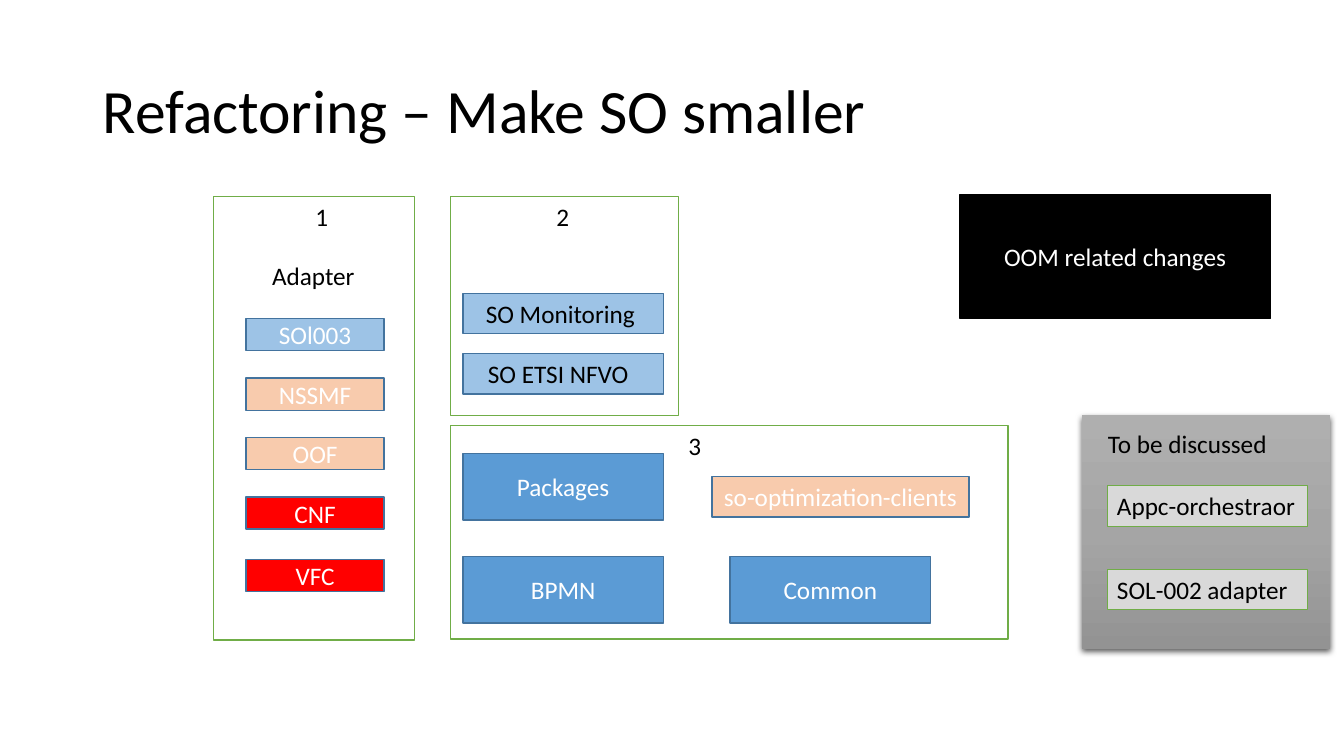
from pptx import Presentation
from pptx.dml.color import RGBColor
from pptx.enum.shapes import MSO_SHAPE as SHAPE
from pptx.enum.text import MSO_ANCHOR as ANCHOR, MSO_AUTO_SIZE as FIT, PP_ALIGN as ALIGN
from pptx.oxml import parse_xml
from pptx.oxml.ns import nsdecls, qn
from pptx.util import Inches, Pt

BLACK = RGBColor(0, 0, 0)
WHITE = RGBColor(255, 255, 255)
GREEN = RGBColor(0x70, 0xAD, 0x47)
NAVY = RGBColor(0x43, 0x73, 0x9E)
BLUE = RGBColor(0x5B, 0x9B, 0xD5)
SKY = RGBColor(0x9D, 0xC3, 0xE6)
PEACH = RGBColor(0xF8, 0xCB, 0xAD)
RED = RGBColor(255, 0, 0)
PALE = RGBColor(0xD9, 0xD9, 0xD9)
GREYS = [(0, "AFAFAF"), (50, "A5A5A5"), (100, "939393")]

COL_X, COL_W = 4.59, 1.99
ADAPTERS = [("SOl003", SKY, 3.16), ("NSSMF", PEACH, 3.75), ("OOF", PEACH, 4.34),
            ("CNF", RED, 4.93), ("VFC", RED, 5.55)]
MODULES = [("Packages", COL_X, 4.5), ("BPMN", COL_X, 5.52), ("Common", 7.24, 5.52)]
SERVICES = [("SO Monitoring", 4.72, 2.91, 1.69), ("SO ETSI NFVO", 4.74, 3.51, 1.61)]
GROUPS = [("1", 3.03, 1.95), ("2", 5.42, 1.95), ("3", 6.73, 4.22)]
TAGS = [("Appc-orchestraor", 4.82), ("SOL-002 adapter", 5.65)]


def style(frame, text, color, size=18):
    frame.text = text
    font = frame.paragraphs[0].runs[0].font
    font.name, font.size, font.color.rgb = "Calibri", Pt(size), color


def add_title(slide, text):
    title = slide.shapes.title
    title.left, title.top = Inches(0.92), Inches(0.4)
    title.width, title.height = Inches(11.5), Inches(1.45)
    frame = title.text_frame
    style(frame, text, BLACK, 44)
    frame.vertical_anchor = ANCHOR.MIDDLE
    frame.paragraphs[0].alignment = ALIGN.LEFT
    frame.paragraphs[0].line_spacing = 0.9


def add_box(slide, at, fill, line, text="", weight=1):
    box = slide.shapes.add_shape(SHAPE.RECTANGLE, *map(Inches, at))
    box.shadow.inherit = False
    box.fill.solid()
    box.fill.fore_color.rgb = fill
    box.line.color.rgb = line
    box.line.width = Pt(weight)
    if text:
        frame = box.text_frame
        style(frame, text, WHITE)
        frame.vertical_anchor = ANCHOR.MIDDLE
        frame.paragraphs[0].alignment = ALIGN.CENTER
    return box


def add_label(slide, text, x, y, width):
    label = slide.shapes.add_textbox(*map(Inches, (x, y, width, 0.4)))
    style(label.text_frame, text, BLACK)
    label.text_frame.word_wrap = False
    label.text_frame.auto_size = FIT.SHAPE_TO_FIT_TEXT


def add_tag(slide, text, y):
    """Add a pale box with black text at its top left."""
    tag = add_box(slide, (10.98, y, COL_W, 0.4), PALE, GREEN, text, 0.75)
    frame = tag.text_frame
    style(frame, text, BLACK)
    frame.word_wrap = False
    frame.vertical_anchor = ANCHOR.TOP
    frame.paragraphs[0].alignment = ALIGN.LEFT


def add_panel(slide, at):
    """Add a grey gradient panel with a soft shadow below."""
    panel = slide.shapes.add_shape(SHAPE.RECTANGLE, *map(Inches, at))
    panel.line.fill.background()
    panel.fill.gradient()
    panel.fill.gradient_angle = 270
    props = panel.fill._xPr
    stops = "".join(f'<a:gs pos="{pos * 1000}"><a:srgbClr val="{hue}"/></a:gs>'
                    for pos, hue in GREYS)
    old = props.find(qn("a:gradFill")).find(qn("a:gsLst"))
    old.getparent().replace(
        old, parse_xml(f'<a:gsLst {nsdecls("a")}>{stops}</a:gsLst>'))
    panel.shadow.inherit = False
    props.find(qn("a:effectLst")).append(parse_xml(
        f'<a:outerShdw {nsdecls("a")} blurRad="{Pt(4.5)}" dist="{Pt(1.5)}" '
        'dir="5400000" algn="ctr" rotWithShape="0"><a:srgbClr val="000000">'
        '<a:alpha val="63000"/></a:srgbClr></a:outerShdw>'))


def main():
    deck = Presentation()
    deck.slide_width, deck.slide_height = Inches(13.33), Inches(7.5)
    slide = deck.slides.add_slide(deck.slide_layouts[5])
    add_title(slide, "Refactoring – Make SO smaller")

    for frame in [(2.12, 1.95, COL_W, 4.4), (4.47, 1.95, 2.26, 2.17),
                  (4.47, 4.22, 5.53, 2.12)]:
        add_box(slide, frame, WHITE, GREEN)
    for text, x, y in GROUPS:
        add_label(slide, text, x, y, 0.33)

    add_label(slide, "Adapter", 2.6, 2.53, 1.03)
    for text, fill, y in ADAPTERS:
        add_box(slide, (2.44, y, 1.37, 0.32), fill, NAVY, text)

    for text, x, y, width in SERVICES:
        add_box(slide, (COL_X, y, COL_W, 0.4), SKY, NAVY)
        add_label(slide, text, x, y, width)

    for text, x, y in MODULES:
        add_box(slide, (x, y, COL_W, 0.66), BLUE, NAVY, text)
    add_box(slide, (7.06, 4.73, 2.55, 0.4), PEACH, NAVY, "so-optimization-clients")
    add_box(slide, (9.52, 1.93, 3.08, 1.23), BLACK, BLACK, "OOM related changes")

    add_panel(slide, (10.73, 4.12, 2.46, 2.32))
    add_label(slide, "To be discussed", 10.89, 4.2, 1.8)
    for text, y in TAGS:
        add_tag(slide, text, y)
    deck.save("out.pptx")


if __name__ == "__main__":
    main()
